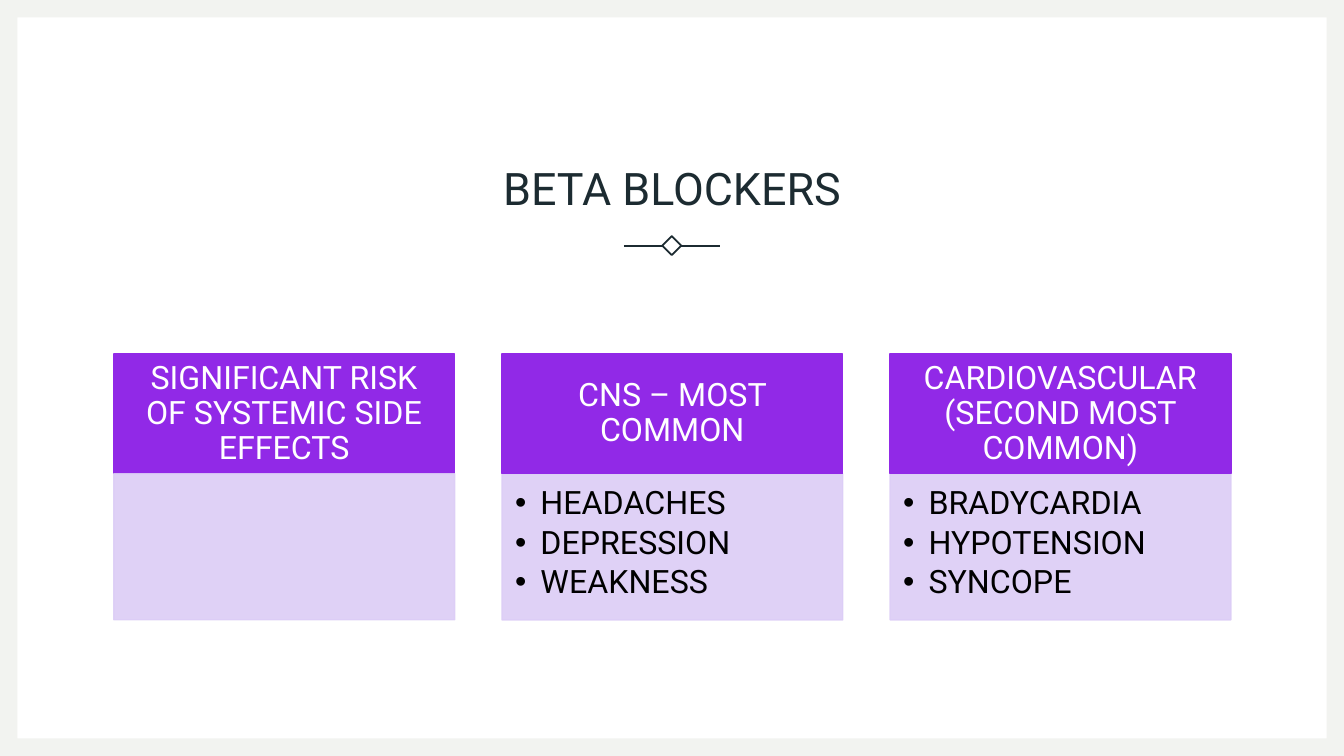
from lxml.etree import SubElement
from pptx import Presentation
from pptx.dml.color import RGBColor
from pptx.enum.shapes import MSO_CONNECTOR, MSO_SHAPE
from pptx.enum.text import MSO_ANCHOR, MSO_AUTO_SIZE, PP_ALIGN
from pptx.oxml.ns import qn
from pptx.util import Cm, Pt

INK, PURPLE, LILAC = "1C2B31", "9129E7", "DCCDF6"


def color(hex_string):
    return RGBColor.from_string(hex_string)


def style_paragraph(paragraph, size, font_color, spacing, after=0):
    paragraph.font.name = "Roboto"
    paragraph.font.size = Pt(size)
    paragraph.font.color.rgb = color(font_color)
    paragraph.line_spacing = spacing
    paragraph.space_before = Pt(0)
    paragraph.space_after = Pt(after)


presentation = Presentation()
presentation.slide_width, presentation.slide_height = Cm(33.87), Cm(19.05)
slide = presentation.slides.add_slide(presentation.slide_layouts[3])
shapes = slide.shapes
title, *lists = slide.placeholders

# Frame around the slide
frame = shapes.add_shape(MSO_SHAPE.FRAME, 0, 0, Cm(33.87), Cm(19.05))
frame.adjustments[0] = 0.44 / 19.05
frame.shadow.inherit = False
frame.fill.solid()
frame.fill.fore_color.rgb = color("F2F3F0")
frame.line.fill.background()

# Title
title.left, title.top, title.width, title.height = Cm(2.87), Cm(2.67), Cm(28.14), Cm(2.87)
title.text_frame.text = "BETA BLOCKERS"
title.text_frame.auto_size = MSO_AUTO_SIZE.NONE
title.text_frame.vertical_anchor = MSO_ANCHOR.BOTTOM
title.text_frame.paragraphs[0].alignment = PP_ALIGN.CENTER
style_paragraph(title.text_frame.paragraphs[0], 32, INK, 1.1)

# Ornament: turned square between two lines
center_x, center_y, side = 16.93, 6.19, 0.34
square = shapes.add_shape(MSO_SHAPE.RECTANGLE, Cm(center_x - side / 2),
                          Cm(center_y - side / 2), Cm(side), Cm(side))
square.rotation = 45
square.shadow.inherit = False
square.fill.background()
square.line.color.rgb = color(INK)
square.line.width = Pt(1.25)
for start, end in [(-1.21, -0.24), (0.24, 1.21)]:
    line = shapes.add_connector(MSO_CONNECTOR.STRAIGHT, Cm(center_x + start), Cm(center_y),
                                Cm(center_x + end), Cm(center_y))
    line.line.color.rgb = color(INK)
    line.line.width = Pt(1.25)
    SubElement(line._element.spPr, qn("a:effectLst"))

# Three columns: heading above a panel, with a list in the last two
columns = [
    ("SIGNIFICANT RISK OF SYSTEMIC SIDE EFFECTS", []),
    ("CNS – MOST COMMON", ["HEADACHES", "DEPRESSION", "WEAKNESS"]),
    ("CARDIOVASCULAR (SECOND MOST COMMON)", ["BRADYCARDIA", "HYPOTENSION", "SYNCOPE"]),
]
for index, (heading, effects) in enumerate(columns):
    left, width = Cm(2.87 + 9.78 * index), Cm(8.59)
    header = shapes.add_shape(MSO_SHAPE.RECTANGLE, left, Cm(8.92), width, Cm(3.02))
    if effects:
        panel = lists[index - 1]
        panel.left, panel.top, panel.width, panel.height = left, Cm(11.94), width, Cm(3.68)
    else:
        panel = shapes.add_shape(MSO_SHAPE.RECTANGLE, left, Cm(11.94), width, Cm(3.68))
        panel.shadow.inherit = False

    header.shadow.inherit = False
    for shape, fill_color in [(header, PURPLE), (panel, LILAC)]:
        shape.fill.solid()
        shape.fill.fore_color.rgb = color(fill_color)
        shape.line.color.rgb = color(fill_color)
        shape.line.width = Pt(1)
    for element in panel._element.spPr.iter(qn("a:srgbClr")):
        SubElement(element, qn("a:alpha"), val="90000")

    # Heading text
    text_frame = header.text_frame
    text_frame.text = heading
    text_frame.word_wrap = True
    text_frame.vertical_anchor = MSO_ANCHOR.MIDDLE
    text_frame.margin_left = text_frame.margin_right = Cm(0.46)
    text_frame.margin_top = text_frame.margin_bottom = Cm(0.25)
    text_frame.paragraphs[0].alignment = PP_ALIGN.CENTER
    style_paragraph(text_frame.paragraphs[0], 23, "FFFFFF", 0.9)

    # Bulleted effects
    if effects:
        text_frame = panel.text_frame
        text_frame.text = "\n".join(effects)
        text_frame.auto_size = MSO_AUTO_SIZE.NONE
        text_frame.vertical_anchor = MSO_ANCHOR.TOP
        text_frame.margin_left = text_frame.margin_top = Cm(0.33)
        text_frame.margin_right, text_frame.margin_bottom = Cm(0.46), Cm(0.51)
        for paragraph in text_frame.paragraphs:
            properties = paragraph._p.get_or_add_pPr()
            properties.set("marL", str(Cm(0.64)))
            properties.set("indent", str(-Cm(0.64)))
            SubElement(properties, qn("a:buChar"), char="•")
            style_paragraph(paragraph, 23, "000000", 0.9, after=3.45)

presentation.save("out.pptx")
